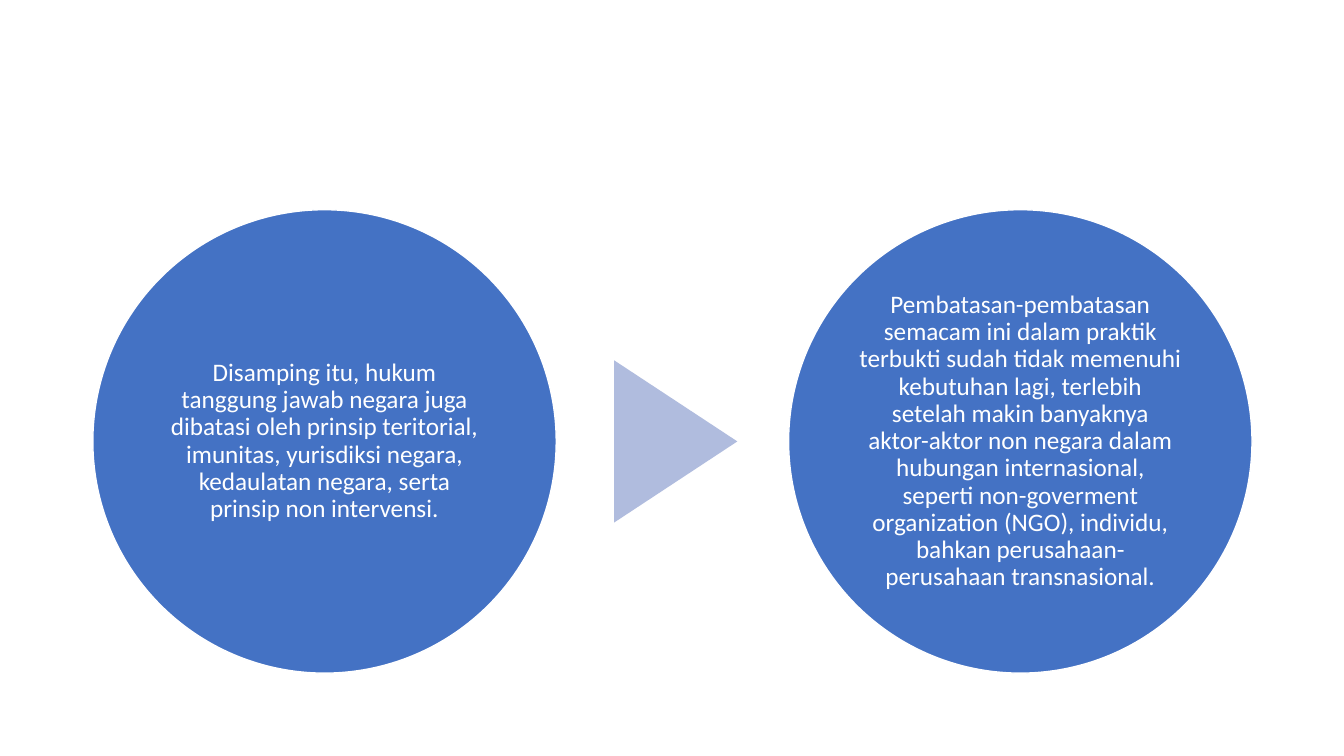
from pptx import Presentation
from pptx.dml.color import RGBColor
from pptx.enum.shapes import MSO_SHAPE as SHAPE
from pptx.enum.text import MSO_ANCHOR as ANCHOR, PP_ALIGN as ALIGN
from pptx.util import Pt

COLORS = {"circle": "4472C4", "arrow": "B0BCDE", "white": "FFFFFF"}
FONT = "Calibri"
STATEMENTS = [
    "Disamping itu, hukum tanggung jawab negara juga dibatasi oleh prinsip "
    "teritorial, imunitas, yurisdiksi negara, kedaulatan negara, serta "
    "prinsip non intervensi.",
    "Pembatasan-pembatasan semacam ini dalam praktik terbukti sudah tidak "
    "memenuhi kebutuhan lagi, terlebih setelah makin banyaknya aktor-aktor "
    "non negara dalam hubungan internasional, seperti non-goverment "
    "organization (NGO), individu, bahkan perusahaan-perusahaan transnasional.",
]


def rgb(name):
    return RGBColor.from_string(COLORS[name])


def add_filled(slide, kind, left, top, width, height, color):
    sp = slide.shapes.add_shape(kind, Pt(left), Pt(top), Pt(width), Pt(height))
    sp.shadow.inherit = False
    sp.fill.solid()
    sp.fill.fore_color.rgb = rgb(color)
    return sp


def add_circle(slide, left, top, diameter, text):
    sp = add_filled(slide, SHAPE.OVAL, left, top, diameter, diameter, "circle")
    sp.line.color.rgb = rgb("white")
    sp.line.width = Pt(1)
    tf = sp.text_frame
    tf.word_wrap = True
    tf.vertical_anchor = ANCHOR.MIDDLE
    tf.margin_left = tf.margin_right = tf.margin_top = tf.margin_bottom = Pt(2)
    tf.text = text
    p = tf.paragraphs[0]
    p.alignment = ALIGN.CENTER
    p.line_spacing = 0.9
    font = p.runs[0].font
    font.name = FONT
    font.size = Pt(18)
    font.color.rgb = rgb("white")


def add_arrow(slide, left, middle, length, breadth):
    """Add a triangle pointing right, its base at left and its tip at middle height."""
    sp = add_filled(slide, SHAPE.ISOSCELES_TRIANGLE, left + (length - breadth) / 2,
                    middle - length / 2, breadth, length, "arrow")
    sp.rotation = 90
    sp.line.fill.background()


def add_circle_process(slide, left, top, width, diameter):
    """Place the circles at equal steps across the width, with arrows between."""
    step = (width - diameter) / (len(STATEMENTS) - 1)
    for i, text in enumerate(STATEMENTS):
        x = left + i * step
        if i:
            add_arrow(slide, x - step + diameter * 1.125, top + diameter / 2,
                      88, diameter * 0.35)
        add_circle(slide, x, top, diameter, text)


def main():
    prs = Presentation()
    prs.slide_width, prs.slide_height = Pt(960), Pt(540)
    slide = prs.slides.add_slide(prs.slide_layouts[6])
    add_circle_process(slide, left=66.3, top=149.8, width=828, diameter=331)
    prs.save("out.pptx")


if __name__ == "__main__":
    main()
